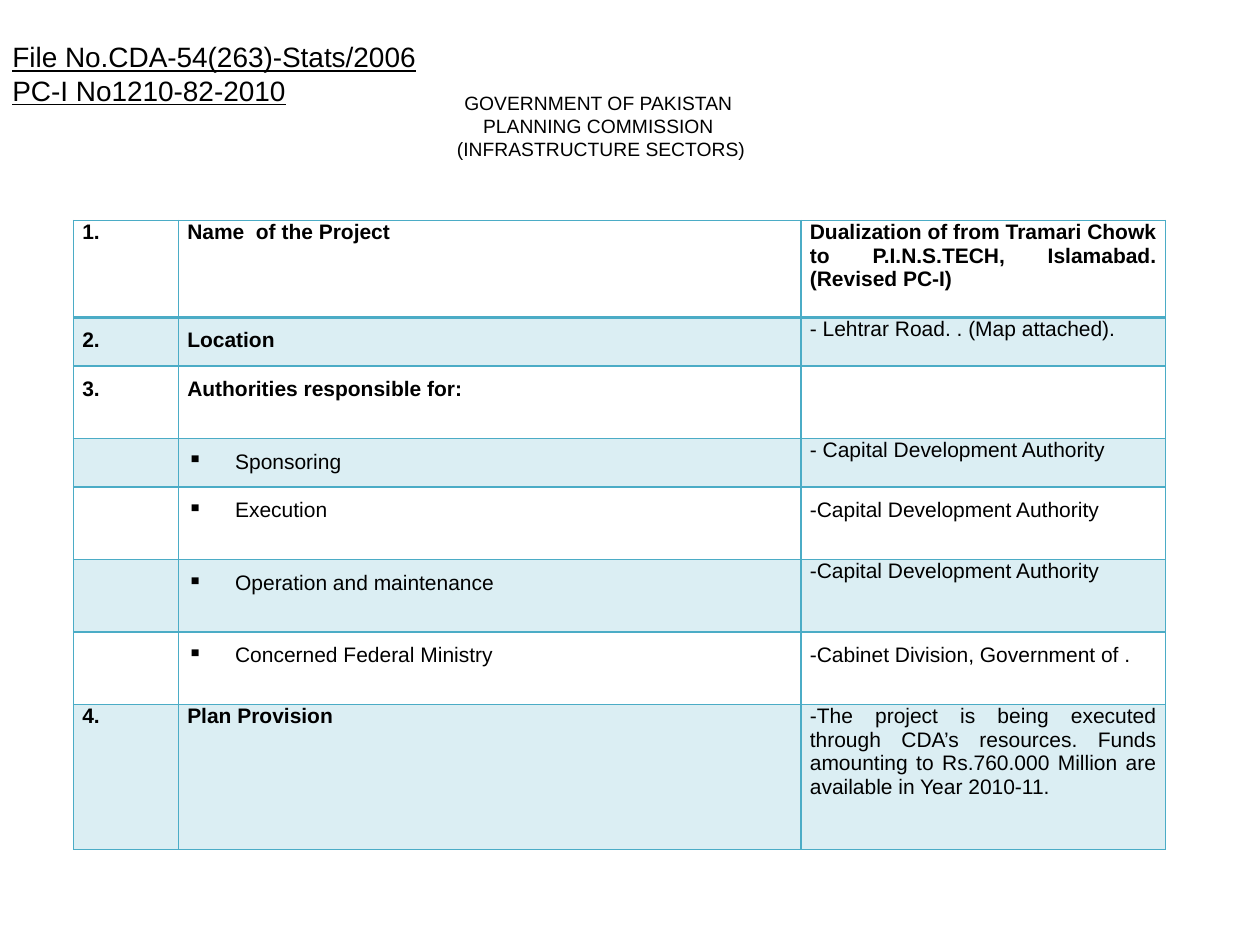
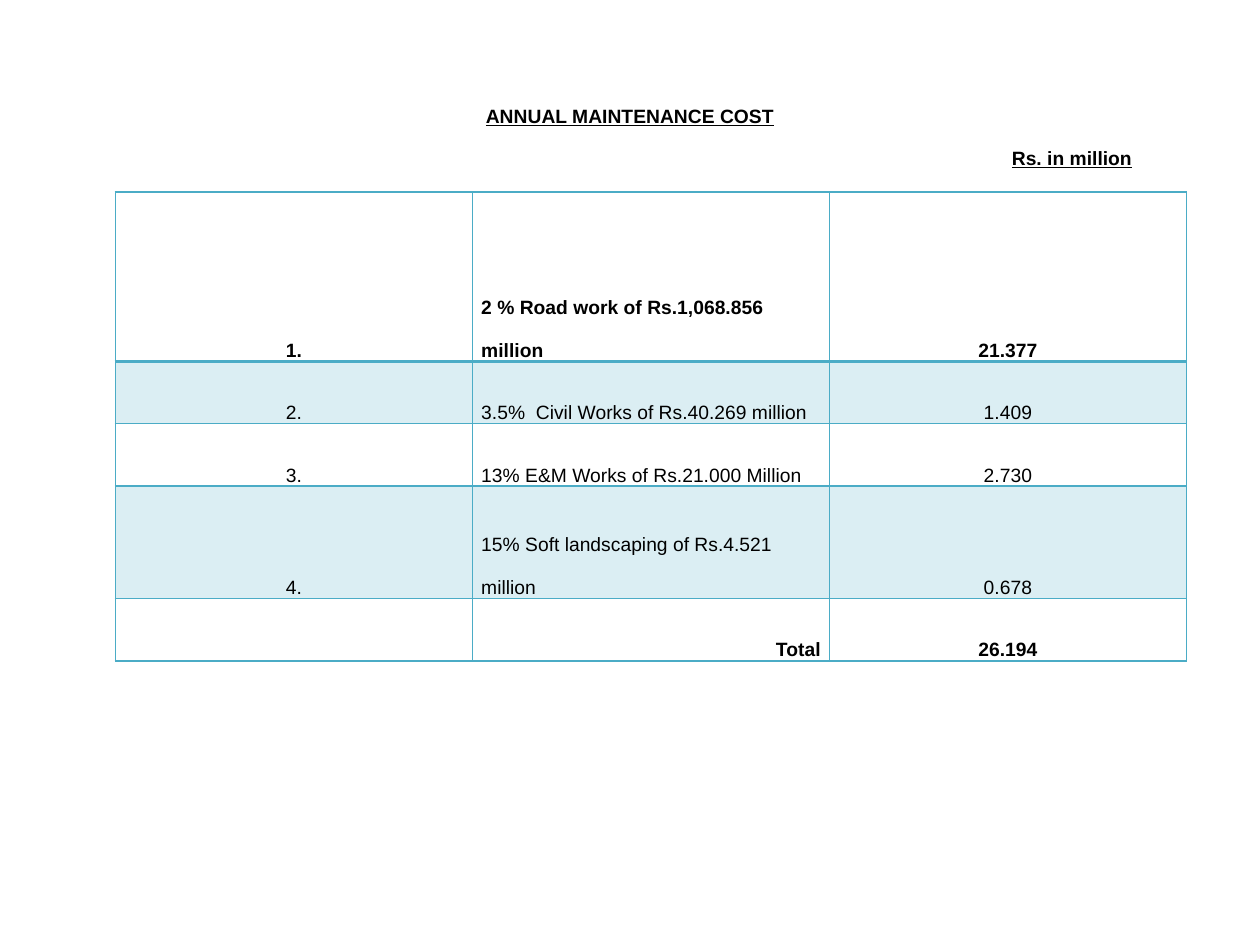
import pptx
import pptx.dml.color
import pptx.enum.text
import pptx.oxml.ns
import pptx.util
from lxml import etree

ALIGN = pptx.enum.text.PP_ALIGN
ANCHOR = pptx.enum.text.MSO_ANCHOR
TEXT, TEAL = "000000", "4BACC6"


def color(value):
    return pptx.dml.color.RGBColor.from_string(value)


def grid(units):
    """Length of grid units; the page is 120 columns by 90 rows."""
    return pptx.util.Inches(units / 12)


def add_node(parent, tag, **attributes):
    node = etree.SubElement(parent, pptx.oxml.ns.qn(tag))
    for name, value in attributes.items():
        node.set(name, str(value))
    return node


class Page:
    font_name = "Arial"
    cell_inset = pptx.util.Inches(0.07)
    bullet_indent = pptx.util.Inches(0.38)

    def __init__(self, deck):
        self.slide = deck.slides.add_slide(deck.slide_layouts[6])

    def style(self, para, text, size, align=ALIGN.LEFT, bold=False,
              underline=False, spacing=1.0, bullet=False):
        para.text = text
        para.alignment = align
        para.line_spacing = spacing
        font = para.font
        font.name, font.size = self.font_name, pptx.util.Pt(size)
        font.bold, font.underline = bold, underline
        font.color.rgb = color(TEXT)
        if bullet:
            self.bullet(para)

    def bullet(self, para):
        properties = para._p.get_or_add_pPr()
        properties.set("marL", str(self.bullet_indent))
        properties.set("indent", str(-self.bullet_indent))
        mark = etree.Element(pptx.oxml.ns.qn("a:buChar"), char="▪")
        properties.find(pptx.oxml.ns.qn("a:defRPr")).addprevious(mark)

    def heading(self, left, top, height, lines, size, **look):
        """Middle-anchored text in a box as wide as the page."""
        box = self.slide.shapes.add_textbox(
            grid(left), grid(top), grid(120), grid(height))
        frame = box.text_frame
        frame.word_wrap = True
        frame.vertical_anchor = ANCHOR.MIDDLE
        for index, line in enumerate(lines):
            para = frame.add_paragraph() if index else frame.paragraphs[0]
            self.style(para, line, size, **look)

    def table(self, left, top, columns, rows, cells, size, anchor):
        """Cells are (text, look) pairs; every second row is tinted."""
        table = self.slide.shapes.add_table(
            len(rows), len(columns), grid(left), grid(top),
            grid(sum(columns)), grid(sum(rows))).table
        table.first_row = table.horz_banding = False
        for column, width in zip(table.columns, columns):
            column.width = grid(width)
        for row, height in zip(table.rows, rows):
            row.height = grid(height)
        for row_index, line in enumerate(cells):
            for column_index, (text, look) in enumerate(line):
                cell = table.cell(row_index, column_index)
                cell.margin_left = cell.margin_right = self.cell_inset
                cell.margin_top = cell.margin_bottom = 0
                cell.vertical_anchor = anchor
                self.style(cell.text_frame.paragraphs[0], text, size, **look)
                self.borders(cell, row_index)
                self.tint(cell, row_index % 2 == 1)

    def borders(self, cell, row_index):
        """Thin teal edges, with a thick rule under the first row."""
        thick_edge = {0: "a:lnB", 1: "a:lnT"}.get(row_index)
        properties = cell._tc.get_or_add_tcPr()
        for edge in ("a:lnL", "a:lnR", "a:lnT", "a:lnB"):
            width = pptx.util.Pt(2 if edge == thick_edge else 1)
            line = add_node(properties, edge, w=int(width))
            add_node(add_node(line, "a:solidFill"), "a:srgbClr", val=TEAL)

    def tint(self, cell, tinted):
        if not tinted:
            cell.fill.background()
            return
        cell.fill.solid()
        cell.fill.fore_color.rgb = color(TEAL)
        fill = cell._tc.tcPr.find(pptx.oxml.ns.qn("a:solidFill"))
        add_node(fill[0], "a:alpha", val=20000)


PLAIN = {}
BOLD = {"bold": True}
JUSTIFIED = {"align": ALIGN.JUSTIFY}
SPACED = {"spacing": 1.5}
EMPTY = ("", PLAIN)


def project_page(deck):
    page = Page(deck)
    bold_spaced = BOLD | SPACED
    item = SPACED | {"bullet": True}
    cells = [
        [("1.", BOLD), ("Name  of the Project", BOLD),
         ("Dualization of from Tramari Chowk to P.I.N.S.TECH, "
          "Islamabad.(Revised PC-I)", BOLD | JUSTIFIED)],
        [("2.", bold_spaced), ("Location", bold_spaced),
         ("- Lehtrar Road. . (Map attached).", JUSTIFIED)],
        [("3.", bold_spaced), ("Authorities responsible for:", bold_spaced),
         EMPTY],
        [EMPTY, ("Sponsoring", item),
         ("- Capital Development Authority", JUSTIFIED)],
        [EMPTY, ("Execution", item),
         ("-Capital Development Authority", SPACED)],
        [EMPTY, ("Operation and maintenance", item),
         ("-Capital Development Authority", PLAIN)],
        [EMPTY, ("Concerned Federal Ministry", item),
         ("-Cabinet Division, Government of .", SPACED)],
        [("4.", BOLD), ("Plan Provision", BOLD),
         ("-The project is being executed through CDA’s resources. Funds "
          "amounting to Rs.760.000 Million are available in Year 2010-11.",
          JUSTIFIED)],
    ]
    page.table(7, 21, [10, 59.3, 34.7],
               [9.2, 4.65, 6.9, 4.65, 6.9, 6.9, 6.9, 13.8],
               cells, 12, ANCHOR.TOP)
    page.heading(-3, 8, 8, ["GOVERNMENT OF PAKISTAN", "PLANNING COMMISSION",
                            " (INFRASTRUCTURE SECTORS)"],
                 11, align=ALIGN.CENTER)
    page.heading(0, 4, 6, ["File No.CDA-54(263)-Stats/2006",
                           "PC-I No1210-82-2010"], 16, underline=True)


def maintenance_page(deck):
    page = Page(deck)
    costs = [
        ("1.", "2 % Road work of Rs.1,068.856 million", "21.377"),
        ("2.", "3.5%  Civil Works of Rs.40.269 million", "1.409"),
        ("3.", "13% E&M Works of Rs.21.000 Million", "2.730"),
        ("4.", "15% Soft landscaping of Rs.4.521 million", "0.678"),
        ("", "Total", "26.194"),
    ]
    cells = []
    for number, work, cost in costs:
        total = work == "Total"
        look = {"spacing": 2.0, "bold": total or number == "1."}
        centered = look | {"align": ALIGN.CENTER}
        work_align = ALIGN.RIGHT if total else ALIGN.LEFT
        cells.append([(number, centered), (work, look | {"align": work_align}),
                      (cost, centered)])
    title = {"bold": True, "underline": True}
    page.heading(0, 8, 6, ["ANNUAL MAINTENANCE COST"], 11,
                 align=ALIGN.CENTER, **title)
    page.table(11, 18.3, [34] * 3, [16.1, 5.95, 5.95, 10.7, 5.95],
               cells, 11, ANCHOR.BOTTOM)
    page.heading(-11, 12, 6, ["Rs. in million"], 11,
                 align=ALIGN.RIGHT, **title)


def main():
    deck = pptx.Presentation()
    deck.slide_width, deck.slide_height = grid(120), grid(90)
    project_page(deck)
    maintenance_page(deck)
    deck.save("out.pptx")


if __name__ == "__main__":
    main()
